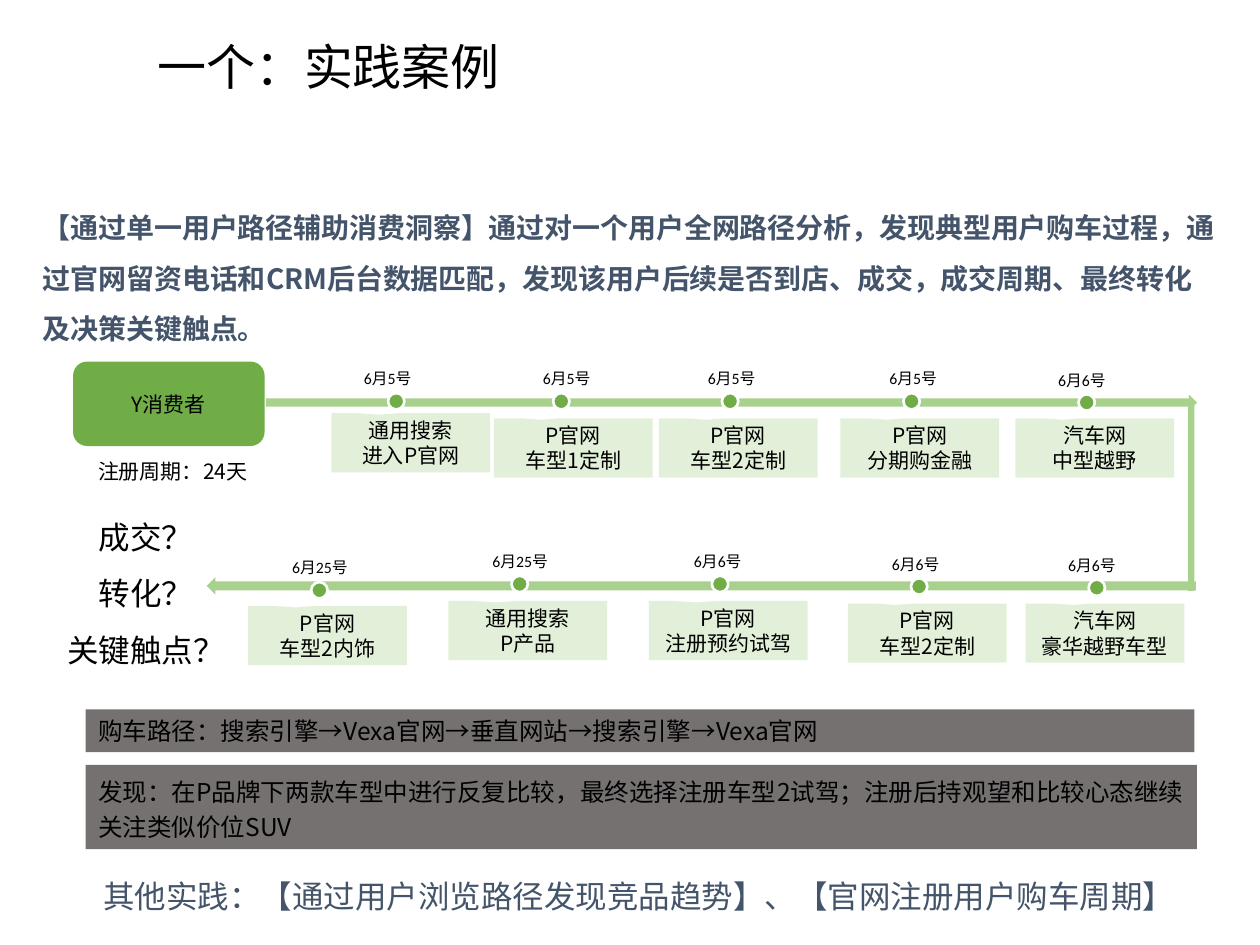
from pptx import Presentation
from pptx.dml.color import RGBColor
from pptx.enum.shapes import MSO_SHAPE as Shape
from pptx.enum.text import MSO_ANCHOR as Anchor, MSO_AUTO_SIZE as AutoSize, PP_ALIGN as Align
from pptx.util import Inches, Pt
from lxml import etree
from pptx.oxml.ns import qn

CALIBRI, NOTO = "Calibri", "Noto Sans CJK SC"
GREEN, PATH_GREEN, PALE_GREEN = "70AD47", "A9D18E", "E2F0D9"
BLACK, WHITE, GRAY, SLATE = "000000", "FFFFFF", "767171", "44546A"

TITLE = "一个：实践案例"
INSIGHT = ("【通过单一用户路径辅助消费洞察】通过对一个用户全网路径分析，发现典型用户购车过程，"
           "通过官网留资电话和CRM后台数据匹配，发现该用户后续是否到店、成交，成交周期、"
           "最终转化及决策关键触点。")
QUESTIONS = ["成交？", "转化？", "关键触点？"]
OTHER_CASES = "其他实践：【通过用户浏览路径发现竞品趋势】、【官网注册用户购车周期】"
CONSUMER = "Y消费者"
PERIOD = "注册周期：24天"
PURCHASE_PATH = "购车路径：搜索引擎→Vexa官网→垂直网站→搜索引擎→Vexa官网"
FINDING = ("发现：在P品牌下两款车型中进行反复比较，最终选择注册车型2试驾；"
           "注册后持观望和比较心态继续关注类似价位SUV")

# date, site, action, callout left, dot top, date offset, dot offset, callout drop
STOPS = [
    ("6月5号", "通用搜索", "进入P官网", 2.63, 3.12, 0.16, 0.45, 0.16),
    ("6月5号", "P官网", "车型1定制", 3.92, 3.12, 0.29, 0.47, 0.2),
    ("6月5号", "P官网", "车型2定制", 5.23, 3.12, 0.29, 0.5, 0.2),
    ("6月5号", "P官网", "分期购金融", 6.67, 3.12, 0.29, 0.5, 0.2),
    ("6月6号", "汽车网", "中型越野", 8.06, 3.13, 0.24, 0.5, 0.19),
    ("6月6号", "汽车网", "豪华越野车型", 8.14, 4.6, 0.24, 0.5, 0.19),
    ("6月6号", "P官网", "车型2定制", 6.73, 4.59, 0.25, 0.5, 0.2),
    ("6月6号", "P官网", "注册预约试驾", 5.15, 4.57, 0.26, 0.5, 0.2),
    ("6月25号", "通用搜索", "P产品", 3.56, 4.57, 0.25, 0.5, 0.2),
    ("6月25号", "P官网", "车型2内饰", 1.97, 4.62, 0.25, 0.5, 0.19),
]


def rgb(value):
    return RGBColor.from_string(value)


def write(shape, lines, size, font=NOTO, color=BLACK, bold=False,
          align=Align.LEFT, spacing=1.0, anchor=Anchor.TOP, grow=True):
    frame = shape.text_frame
    frame_format = {
        "word_wrap": True,
        "vertical_anchor": anchor,
        "auto_size": AutoSize.SHAPE_TO_FIT_TEXT if grow else AutoSize.NONE,
    }
    for name, value in frame_format.items():
        setattr(frame, name, value)
    for index, line in enumerate(lines):
        paragraph = frame.add_paragraph() if index else frame.paragraphs[0]
        paragraph.alignment, paragraph.line_spacing = align, spacing
        run = paragraph.add_run()
        run.text = line
        for name, value in {"name": font, "size": Pt(size), "bold": bold}.items():
            setattr(run.font, name, value)
        run.font.color.rgb = rgb(color)
        if font == NOTO:
            etree.SubElement(run.font._element, qn("a:ea")).set("typeface", font)


def add_text(slide, box, lines, size, **text_format):
    write(slide.shapes.add_textbox(*map(Inches, box)), lines, size, **text_format)


def add_block(slide, kind, box, fill, outline=None):
    block = slide.shapes.add_shape(kind, *map(Inches, box))
    block.shadow.inherit = False
    block.fill.solid()
    block.fill.fore_color.rgb = rgb(fill)
    if outline:
        block.line.color.rgb = rgb(outline)
        block.line.width = Pt(1.5)
    else:
        block.line.fill.background()
    return block


def add_stop(slide, date, site, action, left, dot_top, date_dx, dot_dx, drop):
    add_text(slide, (left + date_dx, dot_top - 0.24, 1.1, 0.25), [date], 9, font=CALIBRI)
    callout = add_block(slide, Shape.RECTANGULAR_CALLOUT,
                        (left, dot_top + drop, 1.26, 0.47), PALE_GREEN)
    callout.adjustments[0], callout.adjustments[1] = -0.201, -0.475
    write(callout, [site, action], 12, align=Align.CENTER, anchor=Anchor.MIDDLE, grow=False)
    add_block(slide, Shape.OVAL, (left + dot_dx, dot_top, 0.13, 0.13), GREEN, WHITE)


def main():
    deck = Presentation()
    deck.slide_width, deck.slide_height = Inches(10), Inches(7.5)
    slide = deck.slides.add_slide(deck.slide_layouts[6])

    add_text(slide, (1.15, 0.25, 7.87, 0.54), [TITLE], 28, font=CALIBRI,
             anchor=Anchor.MIDDLE, grow=False)
    add_text(slide, (0.24, 1.49, 9.51, 1.31), [INSIGHT], 16, color=SLATE,
             bold=True, spacing=1.5)
    add_text(slide, (0.43, 3.91, 1.46, 1.46), QUESTIONS, 18, font=CALIBRI,
             align=Align.CENTER, spacing=1.5)
    add_text(slide, (0.24, 6.91, 9.66, 0.4), [OTHER_CASES], 18, color=SLATE,
             align=Align.CENTER)

    consumer = add_block(slide, Shape.ROUNDED_RECTANGLE, (0.58, 2.87, 1.52, 0.67), GREEN)
    write(consumer, [CONSUMER], 12, align=Align.CENTER, anchor=Anchor.MIDDLE, grow=False)
    add_text(slide, (0.68, 3.59, 1.63, 0.3), [PERIOD], 12)

    add_block(slide, Shape.RIGHT_ARROW, (2.11, 3.13, 7.39, 0.13), PATH_GREEN)
    add_block(slide, Shape.RECTANGLE, (9.43, 3.18, 0.05, 1.51), PATH_GREEN)
    add_block(slide, Shape.LEFT_ARROW, (1.64, 4.58, 7.85, 0.14), PATH_GREEN)
    for stop in STOPS:
        add_stop(slide, *stop)

    for top, width, height, summary, spacing in [(5.63, 8.8, 0.34, PURCHASE_PATH, 1.0),
                                                 (6.07, 8.82, 0.67, FINDING, 1.2)]:
        band = add_block(slide, Shape.RECTANGLE, (0.68, top, width, height), GRAY)
        write(band, [summary], 14, spacing=spacing)

    deck.save("out.pptx")


if __name__ == "__main__":
    main()
